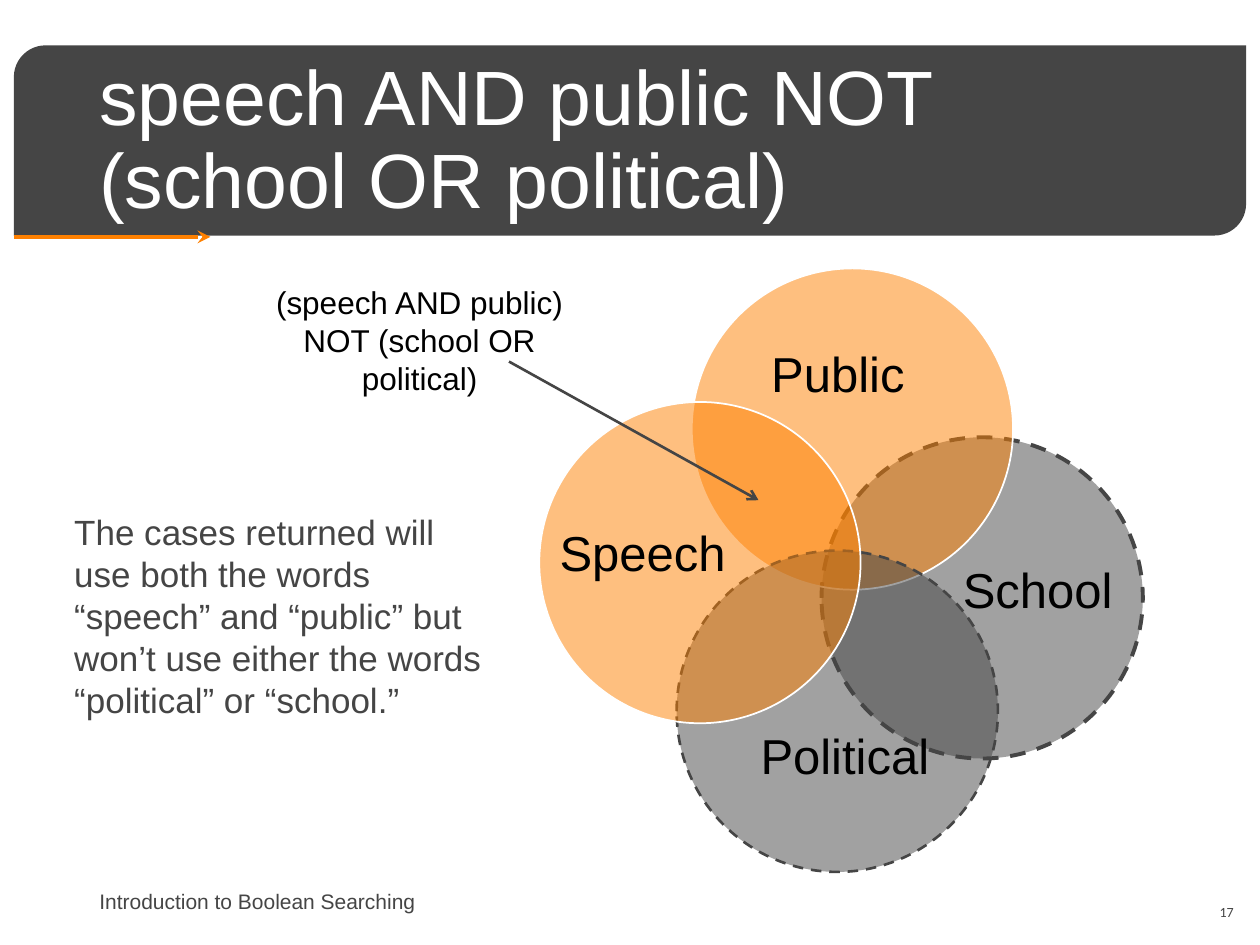
"""Build the Boolean searching slide: a title band and a four-circle Venn diagram."""
from lxml.etree import SubElement
from pptx import Presentation
from pptx.dml.color import RGBColor
from pptx.enum.dml import MSO_LINE
from pptx.enum.shapes import MSO_CONNECTOR, MSO_SHAPE
from pptx.enum.text import MSO_ANCHOR, PP_ALIGN
from pptx.oxml.ns import qn
from pptx.util import Inches, Pt

COLORS = {name: RGBColor.from_string(value) for name, value in {
    "gray": "454545", "orange": "FE8000", "white": "FFFFFF", "black": "000000"}.items()}

prs = Presentation()
prs.slide_width, prs.slide_height = Inches(10), Inches(7.5)
COL, ROW = prs.slide_width / 100, prs.slide_height / 75
s = prs.slides.add_slide(prs.slide_layouts[6])


def grid(x, y, w, h):
    return round(x * COL), round(y * ROW), round(w * COL), round(h * ROW)


def add_text(text, box, size, color, align=PP_ALIGN.LEFT, anchor=MSO_ANCHOR.TOP, font="Arial"):
    tf = s.shapes.add_textbox(*grid(*box)).text_frame
    tf.word_wrap = True
    tf.vertical_anchor = anchor
    p = tf.paragraphs[0]
    p.text = text
    p.alignment = align
    p.font.name, p.font.size = font, Pt(size)
    p.font.color.rgb = COLORS[color]
    return p


band = s.shapes.add_shape(MSO_SHAPE.ROUND_2_DIAG_RECTANGLE, *grid(1.1, 3.6, 97.8, 15.1))
band.shadow.inherit = False
band.fill.solid()
band.fill.fore_color.rgb = COLORS["gray"]
band.line.fill.background()

DIAMETER = 25.5
circles = [
    (65.2, 34.7, "gray", "gray", 2.25, MSO_LINE.DASH),
    (54.9, 21.3, "orange", "white", 1, MSO_LINE.SOLID),
    (53.7, 43.7, "gray", "gray", 1.5, MSO_LINE.DASH),
    (42.8, 31.9, "orange", "white", 1, MSO_LINE.SOLID),
]
for x, y, fill, outline, width, dash in circles:
    sp = s.shapes.add_shape(MSO_SHAPE.OVAL, *grid(x, y, DIAMETER, DIAMETER))
    sp.shadow.inherit = False
    sp.fill.solid()
    sp.fill.fore_color.rgb = COLORS[fill]
    clr = sp.fill._xPr.find(qn("a:solidFill")).find(qn("a:srgbClr"))
    SubElement(clr, qn("a:alpha"), val="50000")
    sp.line.color.rgb = COLORS[outline]
    sp.line.width = Pt(width)
    sp.line.dash_style = dash

title = add_text("speech AND public NOT (school OR political)", (6.9, 4, 86.2, 14.5),
                 44, "white", anchor=MSO_ANCHOR.MIDDLE)
title.line_spacing = 0.9
add_text("The cases returned will use both the words “speech” and “public” but "
         "won’t use either the words “political” or “school.”",
         (4.9, 40, 34.9, 21.2), 20, "gray")
add_text("(speech AND public) NOT (school OR political)", (20.9, 22, 24.8, 10.1),
         18, "black", PP_ALIGN.CENTER)

labels = [("Speech", 42.2, 41, 17.6), ("School", 74.2, 43.9, 16.3),
          ("Public", 56.6, 26.8, 19.8), ("Political", 58.3, 57.1, 17.5)]
for text, x, y, w in labels:
    add_text(text, (x, y, w, 5.7), 28, "black", PP_ALIGN.CENTER)

arrows = [((1.1, 18.8, 16.7, 18.8), "orange", 2.5, "stealth"),
          ((40.4, 28.7, 60.2, 39.7), "gray", 1.5, "arrow")]
for ends, color, width, head in arrows:
    cx = s.shapes.add_connector(MSO_CONNECTOR.STRAIGHT, *grid(*ends))
    cx.line.color.rgb = COLORS[color]
    cx.line.width = Pt(width)
    SubElement(cx.line._get_or_add_ln(), qn("a:tailEnd"), type=head)
    SubElement(cx._element.spPr, qn("a:effectLst"))

add_text("Introduction to Boolean Searching", (6.9, 69.5, 33.1, 4), 12, "gray",
         anchor=MSO_ANCHOR.MIDDLE)
add_text("17", (76.4, 70.4, 22.5, 4), 8, "gray", PP_ALIGN.RIGHT, MSO_ANCHOR.MIDDLE, "Calibri")

prs.save("out.pptx")
